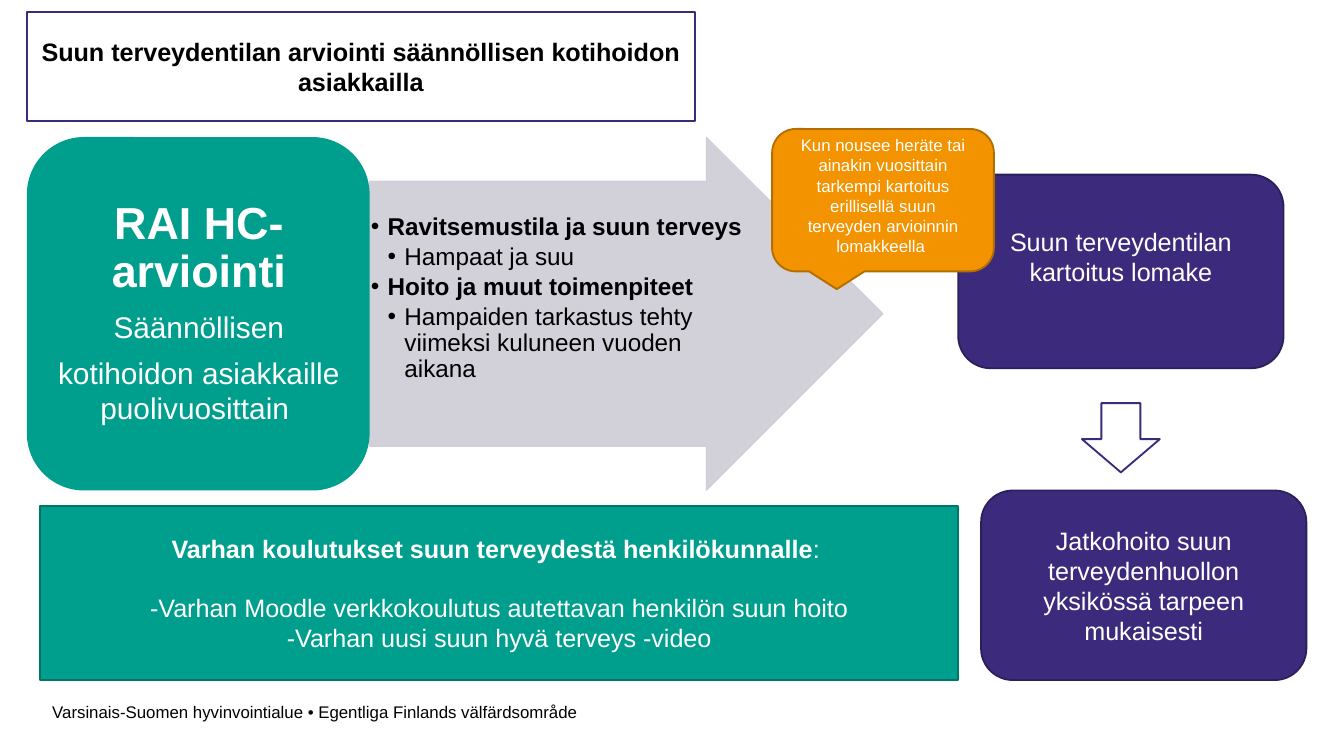
from dataclasses import dataclass
from typing import Any, Optional

from lxml.etree import SubElement
from pptx import Presentation
from pptx.dml.color import RGBColor
from pptx.enum.shapes import MSO_SHAPE
from pptx.enum.text import MSO_ANCHOR, MSO_AUTO_SIZE, PP_ALIGN
from pptx.oxml.ns import qn
from pptx.util import Pt

PX = 4572
TEAL, PURPLE, ORANGE, GREY = "009F8D", "3C2B7C", "F39300", "CECDD7"
WHITE, BLACK = "FFFFFF", "000000"


@dataclass(frozen=True)
class Box:
    left: int
    top: int
    width: int
    height: int

    def emu(self) -> list[int]:
        return [value * PX for value in (self.left, self.top, self.width, self.height)]


@dataclass(frozen=True)
class Run:
    text: str
    size: float = 13.5
    bold: bool = False


@dataclass(frozen=True)
class Line:
    runs: tuple[Run, ...]
    after: float = 0
    spacing: float = 1.0
    align: Any = PP_ALIGN.CENTER
    bullet_level: int = 0


@dataclass(frozen=True)
class Panel:
    kind: Any
    box: Box
    fill: str
    outline: Optional[str] = None
    lines: tuple[Line, ...] = ()
    insets: tuple[int, ...] = (20, 10, 20, 10)
    adjustments: tuple[float, ...] = ()


def color(value: str) -> RGBColor:
    return RGBColor.from_string(value)


def apply(target: Any, values: dict[str, Any]) -> None:
    for name, value in values.items():
        setattr(target, name, value)


def paint(shape: Any, fill: str, outline: Optional[str], width: float = 1) -> None:
    shape.fill.solid()
    shape.fill.fore_color.rgb = color(fill)
    if outline is None:
        shape.line.fill.background()
    else:
        shape.line.color.rgb = color(outline)
        shape.line.width = Pt(width)


def add_bullet(paragraph: Any, level: int) -> None:
    properties = paragraph._p.get_or_add_pPr()
    properties.set("marL", str(level * 25 * PX))
    properties.set("indent", str(-25 * PX))
    SubElement(properties, qn("a:buFont")).set("typeface", "Arial")
    SubElement(properties, qn("a:buChar")).set("char", "•")


def write(shape: Any, lines: tuple[Line, ...], text_color: str,
          insets: tuple[int, ...] = (20, 10, 20, 10), anchor: Any = MSO_ANCHOR.MIDDLE) -> None:
    frame = shape.text_frame
    left, top, right, bottom = (value * PX for value in insets)
    apply(frame, {"word_wrap": True, "auto_size": MSO_AUTO_SIZE.NONE, "vertical_anchor": anchor,
                  "margin_left": left, "margin_top": top,
                  "margin_right": right, "margin_bottom": bottom})
    for index, line in enumerate(lines):
        paragraph = frame.add_paragraph() if index else frame.paragraphs[0]
        if line.bullet_level:
            add_bullet(paragraph, line.bullet_level)
        apply(paragraph, {"alignment": line.align, "line_spacing": line.spacing,
                          "space_before": Pt(0), "space_after": Pt(line.after)})
        for item in line.runs:
            run = paragraph.add_run()
            run.text = item.text
            apply(run.font, {"name": "Arial", "size": Pt(item.size), "bold": item.bold})
            run.font.color.rgb = color(text_color)


def add_panel(slide: Any, panel: Panel) -> Any:
    shape = slide.shapes.add_shape(panel.kind, *panel.box.emu())
    shape.shadow.inherit = False
    for index, value in enumerate(panel.adjustments):
        shape.adjustments[index] = value
    paint(shape, panel.fill, panel.outline)
    if panel.lines:
        write(shape, panel.lines, WHITE, panel.insets)
    return shape


def add_text(slide: Any, box: Box, lines: tuple[Line, ...], text_color: str, **options: Any) -> None:
    write(slide.shapes.add_textbox(*box.emu()), lines, text_color, **options)


def make_translucent(shape: Any, percent: int) -> None:
    for element in shape._element.spPr.iter(qn("a:srgbClr")):
        SubElement(element, qn("a:alpha")).set("val", str(percent * 1000))


def bullet(text: str, level: int) -> Line:
    return Line((Run(text, 13, level == 1),), 2, 0.9, PP_ALIGN.LEFT, level)


TITLE = (Line((Run("Suun terveydentilan arviointi säännöllisen kotihoidon asiakkailla", bold=True),)),)
FOOTER = (Line((Run("Varsinais-Suomen hyvinvointialue • Egentliga Finlands välfärdsområde", 9),),
               align=PP_ALIGN.LEFT),)
ASSESSMENT = (
    Line((Run("RAI HC-arviointi", 24, True),), 8.5, 0.9),
    Line((Run("Säännöllisen kotihoidon asiakkaille", 16), Run(" ", 24),
          Run("puolivuosittain ", 16)), 5.6, 0.9),
)
TOPICS = (
    bullet("Ravitsemustila ja suun terveys", 1),
    bullet("Hampaat ja suu", 2),
    bullet("Hoito ja muut toimenpiteet", 1),
    bullet("Hampaiden tarkastus tehty viimeksi kuluneen vuoden aikana", 2),
)
ARROW = Panel(MSO_SHAPE.RIGHT_ARROW, Box(550, 204, 764, 526), GREY, GREY, adjustments=(0.75, 0.5))
ASSESSMENT_CARD = Panel(MSO_SHAPE.ROUNDED_RECTANGLE, Box(40, 204, 510, 526), TEAL)
PANELS = (
    Panel(MSO_SHAPE.ROUNDED_RECTANGLE, Box(1426, 260, 484, 288), PURPLE, "2C205C",
          (Line((Run("Suun terveydentilan kartoitus lomake"),)),), (20, 10, 20, 55)),
    Panel(MSO_SHAPE.ROUNDED_RECTANGLE, Box(1460, 730, 484, 282), PURPLE, "2C205C",
          (Line((Run("Jatkohoito suun terveydenhuollon yksikössä tarpeen mukaisesti"),)),)),
    Panel(MSO_SHAPE.DOWN_ARROW, Box(1610, 600, 116, 103), WHITE, PURPLE, adjustments=(0.5, 0.48)),
    Panel(MSO_SHAPE.RECTANGLE, Box(60, 753, 1366, 259), TEAL, "007668",
          (Line((Run("Varhan koulutukset suun terveydestä henkilökunnalle", bold=True), Run(": ")), 15.5),
           Line((Run("-Varhan Moodle verkkokoulutus autettavan henkilön suun hoito"),)),
           Line((Run("-Varhan uusi suun hyvä terveys -video"),)))),
    Panel(MSO_SHAPE.ROUNDED_RECTANGULAR_CALLOUT, Box(1149, 192, 330, 212), ORANGE, "B46D00",
          (Line((Run("Kun nousee heräte tai ainakin vuosittain tarkempi kartoitus "
                     "erillisellä suun terveyden arvioinnin lomakkeella ", 9),)),), (20, 0, 20, 14)),
)


def main() -> None:
    presentation = Presentation()
    apply(presentation, {"slide_width": 2000 * PX, "slide_height": 1125 * PX})
    slide = presentation.slides.add_slide(presentation.slide_layouts[5])

    title = slide.shapes.title
    apply(title, dict(zip(("left", "top", "width", "height"), Box(40, 18, 994, 162).emu())))
    paint(title, WHITE, PURPLE)
    write(title, TITLE, BLACK)

    add_text(slide, Box(58, 1035, 916, 50), FOOTER, BLACK, anchor=MSO_ANCHOR.TOP)
    arrow = add_panel(slide, ARROW)
    arrow.line.width = Pt(0.5)
    make_translucent(arrow, 90)
    add_text(slide, Box(550, 317, 566, 347), TOPICS, BLACK,
             insets=(2, 2, 2, 2), anchor=MSO_ANCHOR.TOP)
    add_panel(slide, ASSESSMENT_CARD)
    add_text(slide, Box(66, 228, 460, 476), ASSESSMENT, WHITE, insets=(10, 10, 10, 10))
    for panel in PANELS:
        add_panel(slide, panel)
    presentation.save("out.pptx")


if __name__ == "__main__":
    main()
